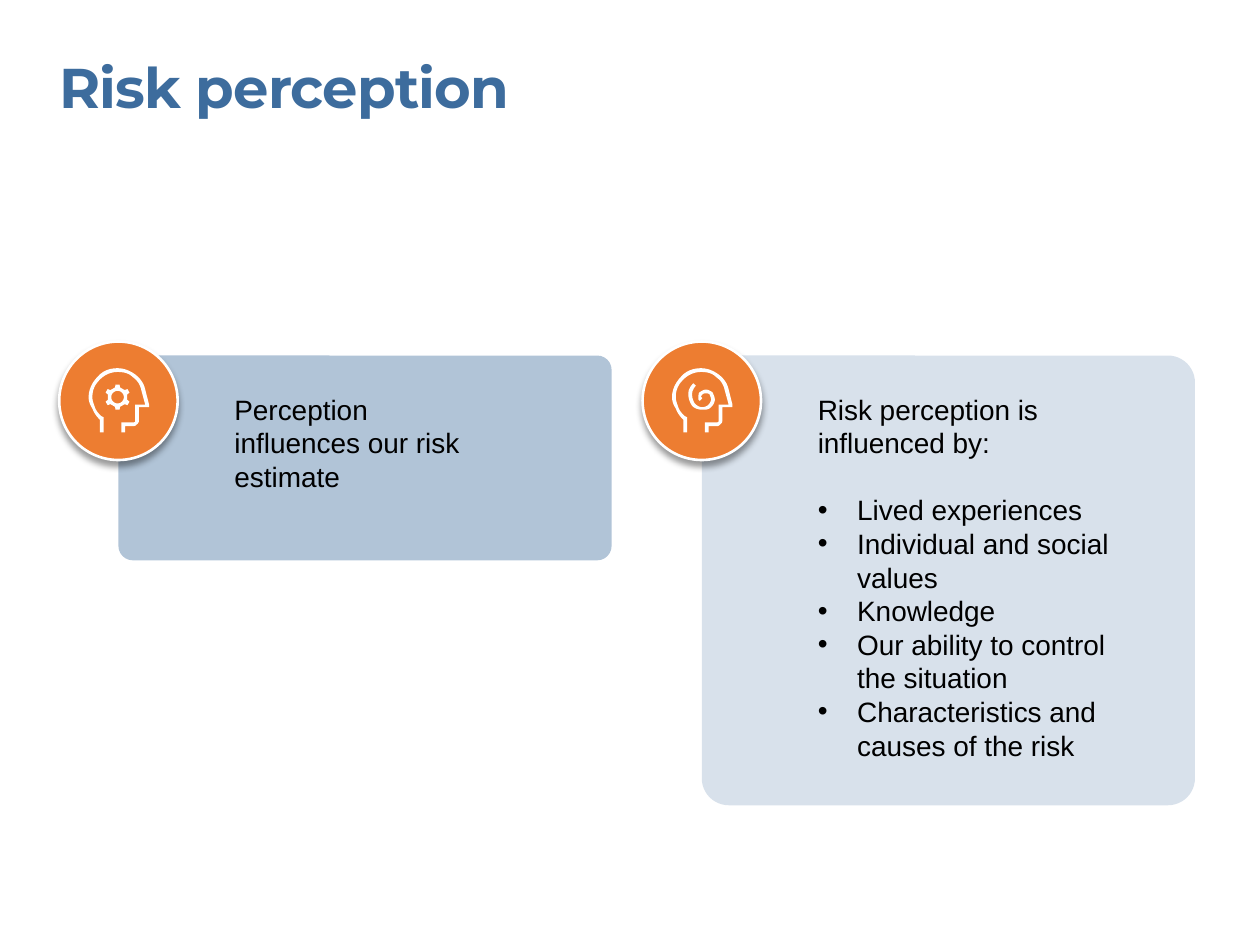
from math import cos, pi, sin, tau

from lxml import etree
from pptx import Presentation
from pptx.dml.color import RGBColor
from pptx.enum.shapes import MSO_SHAPE
from pptx.enum.text import MSO_ANCHOR, MSO_AUTO_SIZE, PP_ALIGN
from pptx.oxml.ns import qn
from pptx.util import Pt

ROUND, OVAL = MSO_SHAPE.ROUNDED_RECTANGLE, MSO_SHAPE.OVAL
TOP, LEFT, FIXED = MSO_ANCHOR.TOP, PP_ALIGN.LEFT, MSO_AUTO_SIZE.NONE
BLUE = RGBColor(0x3D, 0x6C, 0x9D)
ORANGE = RGBColor(0xED, 0x7D, 0x31)
WHITE = RGBColor(0xFF, 0xFF, 0xFF)
BLACK = RGBColor(0, 0, 0)

HEAD = [
    (9, 51), (9, 41), (6, 38, 4, 35, 3, 32), (1, 29, 0, 26, 0, 23),
    (0, 17, 3, 11, 7, 7), (11, 2, 17, 0, 23, 0), (28, 0, 33, 2, 37, 5),
    (41, 8, 44, 12, 45, 17), (48, 29), (48, 29, 48, 30, 48, 31),
    (47, 31, 47, 31, 46, 31), (40, 31), (40, 41), (40, 42, 40, 43, 39, 44),
    (38, 45, 37, 46, 36, 46), (29, 46), (29, 51), (26, 51), (26, 43), (36, 43),
    (36, 43, 37, 43, 37, 42), (37, 41), (37, 29), (45, 29), (42, 18),
    (41, 13, 39, 10, 35, 7), (32, 4, 28, 3, 23, 3), (18, 3, 13, 5, 9, 9),
    (5, 13, 3, 17, 3, 23), (3, 26, 4, 28, 5, 31), (6, 34, 8, 36, 10, 38),
    (12, 39), (12, 51),
]
SWIRL = [
    (24, 33), (27, 33, 29, 33, 31, 31), (33, 29, 34, 27, 34, 25),
    (34, 23, 33, 21, 32, 19), (30, 18, 29, 17, 27, 17),
    (25, 17, 24, 18, 22, 19), (21, 20, 21, 21, 21, 23),
    (21, 23, 21, 24, 21, 25), (22, 26), (24, 24), (24, 23, 23, 23, 23, 23),
    (23, 22, 24, 21, 24, 21), (25, 20, 26, 20, 27, 20),
    (28, 20, 29, 20, 30, 21), (30, 22, 31, 23, 31, 25),
    (31, 26, 30, 28, 29, 29), (28, 30, 26, 31, 24, 31),
    (22, 31, 20, 30, 18, 28), (17, 26, 16, 24, 16, 21),
    (16, 20, 16, 18, 17, 17), (17, 16, 18, 15, 19, 14), (17, 12),
    (16, 13, 15, 14, 14, 16), (13, 18, 13, 19, 13, 21),
    (13, 24, 14, 27, 16, 30), (18, 32, 21, 33, 24, 33),
]


def gear(mid=23, teeth=6):
    points = []
    for tooth in range(teeth):
        turn = tau * tooth / teeth + pi / 2
        for out, side in ((7.7, -2), (10, -1.6), (10, 1.6), (7.7, 2)):
            points.append((mid + out * cos(turn) - side * sin(turn),
                           mid + out * sin(turn) + side * cos(turn)))
    return points


def ring(mid=23, size=5, steps=32):
    return [(mid + size * cos(tau * n / steps), mid + size * sin(tau * n / steps))
            for n in range(steps)]


def trace(path, steps=6):
    points = []
    for item in path:
        if len(item) == 2:
            points.append(item)
            continue
        start = points[-1]
        for n in range(1, steps + 1):
            t = n / steps
            u = 1 - t
            points.append(tuple(
                u ** 3 * start[i] + 3 * u * u * t * item[i]
                + 3 * u * t * t * item[i + 2] + t ** 3 * item[i + 4]
                for i in (0, 1)))
    return [(x * 72, y * 72) for x, y in points]


def put(target, style):
    for name, value in style.items():
        setattr(target, name, value)


def add(parent, tag, **attrs):
    return etree.SubElement(parent, qn(tag), {k: str(v) for k, v in attrs.items()})


class Deck:
    frame = dict(margin_left=0, margin_top=0, margin_right=0, margin_bottom=0,
                 word_wrap=True, auto_size=FIXED, vertical_anchor=TOP)
    para = dict(alignment=LEFT, space_before=Pt(0), space_after=Pt(0))
    head = dict(name="Montserrat", size=Pt(32), bold=True)
    body = dict(name="Arial", size=Pt(16), bold=False)

    def __init__(self):
        self.show = Presentation()
        put(self.show, dict(slide_width=Pt(720), slide_height=Pt(540)))
        self.page = self.show.slides.add_slide(self.show.slide_layouts[3])

    def text(self, slot, box, lines, font, color):
        holder = self.page.placeholders[slot]
        put(holder, dict(zip(("left", "top", "width", "height"), map(Pt, box))))
        tree = holder.element.getparent()
        tree.append(holder.element)
        frame = holder.text_frame
        frame.text = "\n".join(lines)
        put(frame, self.frame)
        for para in frame.paragraphs:
            put(para, self.para)
            put(para.font, font)
            run = para.runs[0]
            put(run.font, font)
            run.font.color.rgb = color
        return frame

    def title(self, words, box):
        frame = self.text(0, box, [words], self.head, BLUE)
        frame.paragraphs[0].runs[0].font._element.set("spc", "-50")

    def list(self, slot, box, lead, items):
        frame = self.text(slot, box, [lead, *items], self.body, BLACK)
        for n, para in enumerate(frame.paragraphs):
            props = para._p.get_or_add_pPr()
            if n == 1:
                para.space_before = Pt(19.2)
            indent = Pt(22.5) if n else 0
            props.set("marL", str(indent))
            props.set("indent", str(-indent))
            for old in props.findall(qn("a:defRPr")):
                props.remove(old)
            if n:
                add(add(props, "a:buClr"), "a:srgbClr", val=BLACK)
                add(props, "a:buFont", typeface="Arial")
                add(props, "a:buChar", char="•")
            else:
                add(props, "a:buNone")

    def shape(self, kind, box, color):
        shape = self.page.shapes.add_shape(kind, *map(Pt, box))
        return self.paint(shape, color)

    def paint(self, shape, color):
        shape.shadow.inherit = False
        shape.fill.solid()
        shape.fill.fore_color.rgb = color
        shape.line.fill.background()
        return shape

    def panel(self, box, curve, alpha):
        panel = self.shape(ROUND, box, BLUE)
        panel.adjustments[0] = curve
        tint = panel.element.spPr.find(".//" + qn("a:srgbClr"))
        add(tint, "a:alpha", val=alpha * 1000)

    def badge(self, box):
        badge = self.shape(OVAL, box, ORANGE)
        badge.line.color.rgb = WHITE
        badge.line.width = Pt(1.5)
        effect = badge.element.spPr.find(qn("a:effectLst"))
        shade = add(effect, "a:outerShdw", blurRad=Pt(4), dist=Pt(3),
                    dir=5400000, algn="ctr", rotWithShape=0)
        add(add(shade, "a:srgbClr", val=BLACK), "a:alpha", val=40000)

    def icon(self, left, top, paths):
        first, *rest = map(trace, paths)
        pen = self.page.shapes.build_freeform(*first[0], scale=Pt(0.01))
        pen.add_line_segments(first[1:], close=True)
        for points in rest:
            pen.move_to(*points[0])
            pen.add_line_segments(points[1:], close=True)
        self.paint(pen.convert_to_shape(Pt(left), Pt(top)), WHITE)


def main():
    deck = Deck()
    deck.title("Risk perception", (34, 30, 649.5, 39))
    cards = [
        (117, 0.07, 40, 142.5, 58, [HEAD, gear(), ring()],
         "Perception influences our risk estimate", []),
        (257, 0.06, 20, 183.5, 213, [HEAD, SWIRL],
         "Risk perception is influenced by:",
         ["Lived experiences", "Individual and social values", "Knowledge",
          "Our ability to control the situation",
          "Characteristics and causes of the risk"]),
    ]
    for n, (high, curve, alpha, wide, tall, paths, lead, items) in enumerate(cards):
        left = 33.84 + n * 333.36
        deck.panel((left + 33.84, 203.2, 281.8, high), curve, alpha)
        deck.list(n + 1, (left + 100.1, 224.1, wide, tall), lead, items)
        deck.badge((left, 195.2, 67.7, 67.7))
        deck.icon(left + 16.8, 210.4, paths)
    deck.show.save("out.pptx")


if __name__ == "__main__":
    main()
